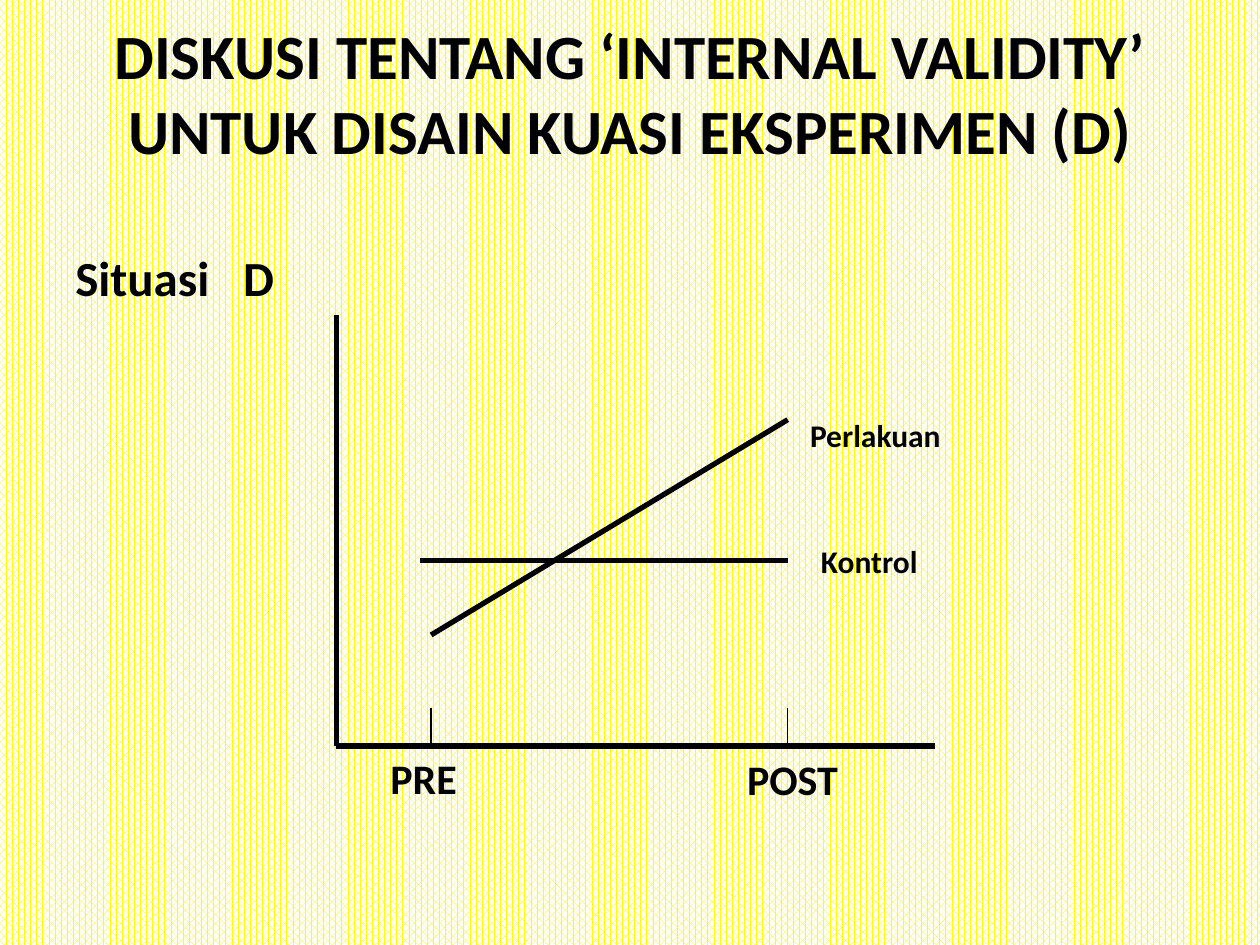
import pptx
import pptx.dml.color
import pptx.enum.dml
import pptx.enum.shapes
import pptx.enum.text
import pptx.oxml
import pptx.oxml.ns
import pptx.util
from pptx.util import Cm

BLACK = pptx.dml.color.RGBColor(0, 0, 0)
YELLOW = pptx.dml.color.RGBColor(255, 255, 0)
WHITE = pptx.dml.color.RGBColor(255, 255, 255)
FONT = "Calibri"

AXIS_LEFT, AXIS_RIGHT = 6.78, 18.85
AXIS_TOP, AXIS_BOTTOM = 6.35, 15.04
PRE_X, POST_X = 8.69, 15.88
TICK_TOP = 14.27


def paint_background(slide):
    fill = slide.background.fill
    fill.patterned()
    fill.pattern = pptx.enum.dml.MSO_PATTERN.PERCENT_70
    fill.fore_color.rgb = YELLOW
    fill.back_color.rgb = WHITE


def write_text(frame, text, size):
    frame.word_wrap = True
    frame.auto_size = pptx.enum.text.MSO_AUTO_SIZE.NONE
    frame.vertical_anchor = pptx.enum.text.MSO_ANCHOR.TOP
    frame.text = text
    for run in frame.paragraphs[0].runs:
        run.font.name = FONT
        run.font.size = pptx.util.Pt(size)
        run.font.bold = True
        run.font.color.rgb = BLACK


def add_heading(slide, text):
    heading = slide.shapes.title
    heading.left, heading.top = Cm(1.27), Cm(0.2)
    heading.width, heading.height = Cm(22.86), Cm(3.33)
    write_text(heading.text_frame, text, 36)
    heading.text_frame.paragraphs[0].alignment = pptx.enum.text.PP_ALIGN.CENTER


def add_label(slide, text, left, top, width, height, size):
    label = slide.shapes.add_textbox(Cm(left), Cm(top), Cm(width), Cm(height))
    write_text(label.text_frame, text, size)
    return label.text_frame.paragraphs[0]


def add_tab_stop(paragraph, position):
    properties = paragraph._p.get_or_add_pPr()
    stops = pptx.oxml.parse_xml(
        f'<a:tabLst {pptx.oxml.ns.nsdecls("a")}>'
        f'<a:tab pos="{Cm(position)}" algn="l"/></a:tabLst>'
    )
    properties.append(stops)


def add_line(slide, start_x, start_y, end_x, end_y, weight=3):
    line = slide.shapes.add_connector(
        pptx.enum.shapes.MSO_CONNECTOR.STRAIGHT,
        Cm(start_x), Cm(start_y), Cm(end_x), Cm(end_y),
    )
    line.line.color.rgb = BLACK
    line.line.width = pptx.util.Pt(weight)
    no_effects = pptx.oxml.parse_xml(f'<a:effectLst {pptx.oxml.ns.nsdecls("a")}/>')
    line._element.spPr.append(no_effects)


def add_axes(slide):
    add_line(slide, AXIS_LEFT, AXIS_BOTTOM, AXIS_RIGHT, AXIS_BOTTOM)
    add_line(slide, AXIS_LEFT, AXIS_TOP, AXIS_LEFT, AXIS_BOTTOM)
    for name, tick_x, label_top in (("PRE", PRE_X, 15.04), ("POST", POST_X, 15.06)):
        add_line(slide, tick_x, AXIS_BOTTOM, tick_x, TICK_TOP, 0.75)
        add_label(slide, name, tick_x - 1.07, label_top, 2.54, 1.27, 24)


def add_groups(slide):
    add_line(slide, POST_X, 11.3, 8.46, 11.3)
    add_line(slide, POST_X, 8.46, PRE_X, 12.8)
    add_label(slide, "Kontrol", 16.3, 10.8, 5.08, 1.02, 18)
    add_label(slide, "Perlakuan", 16.08, 8.26, 5.5, 1.02, 18)


def main():
    presentation = pptx.Presentation()
    presentation.slide_width, presentation.slide_height = Cm(25.4), Cm(19.05)
    slide = presentation.slides.add_slide(presentation.slide_layouts[5])
    paint_background(slide)
    add_heading(
        slide, "DISKUSI TENTANG ‘INTERNAL VALIDITY’ UNTUK DISAIN KUASI EKSPERIMEN (D)"
    )
    add_axes(slide)
    add_groups(slide)
    situation = add_label(slide, "Situasi\tD", 1.27, 4.87, 5.5, 1.45, 28)
    add_tab_stop(situation, 3.38)
    presentation.save("out.pptx")


if __name__ == "__main__":
    main()
